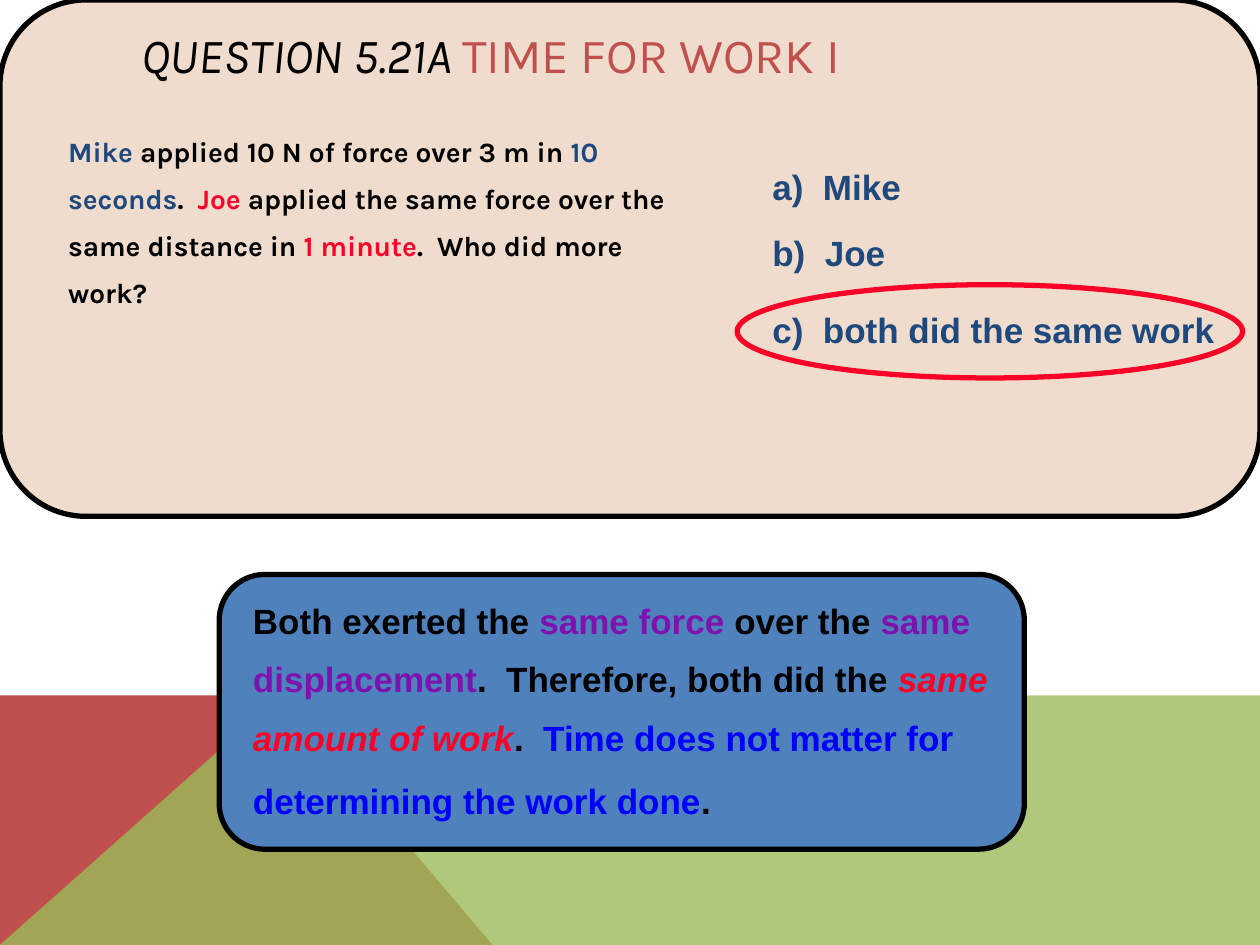
import pptx
import pptx.dml.color
import pptx.enum.shapes
import pptx.enum.text
import pptx.oxml.ns
import pptx.util
from dataclasses import dataclass
from lxml import etree
from pptx.util import Cm


@dataclass(frozen=True)
class Theme:
    black: str = "000000"
    red: str = "C0504D"
    green: str = "9BBB59"
    blue: str = "4F81BD"
    sand: str = "EFDCCD"
    navy: str = "1F497D"
    alert: str = "FC0128"
    purple: str = "7E12AE"
    vivid: str = "0000FF"
    head: str = "Karla"
    sans: str = "Arial"
    title: int = 28
    body: int = 16
    note: int = 20
    edge: int = 3


T = Theme()
SHAPES = pptx.enum.shapes.MSO_SHAPE
WIDTH, HEIGHT = 25.4, 19.05


def rgb(color):
    return pptx.dml.color.RGBColor.from_string(color)


def place(shape, box):
    shape.left, shape.top, shape.width, shape.height = map(Cm, box)


def write(par, text, font=T.sans, size=T.note, color=T.black, bold=True, italic=False):
    run = par.add_run()
    run.text = text
    run.font.name = font
    run.font.size = pptx.util.Pt(size)
    run.font.color.rgb = rgb(color)
    run.font.bold = bold
    run.font.italic = italic


def layout(par, lines, before, indent=0):
    """Set spacing and left indent, with no bullet."""
    par.alignment = pptx.enum.text.PP_ALIGN.LEFT
    par.line_spacing = lines
    par.space_before = pptx.util.Pt(before)
    props = par._p.get_or_add_pPr()
    props.set("marL", str(Cm(indent)))
    props.set("indent", "0")
    etree.SubElement(props, pptx.oxml.ns.qn("a:buNone"))


def panel(slide, kind, box, line, fill=None):
    shape = slide.shapes.add_shape(kind, *map(Cm, box))
    shape.shadow.inherit = False
    if fill:
        shape.fill.solid()
        shape.fill.fore_color.rgb = rgb(fill)
    else:
        shape.fill.background()
    shape.line.color.rgb = rgb(line)
    shape.line.width = pptx.util.Pt(T.edge)


def wedge(slide, points, color, alpha=100):
    spots = [(Cm(x), Cm(y)) for x, y in points]
    pen = slide.shapes.build_freeform(*spots[0])
    pen.add_line_segments(spots[1:], close=True)
    shape = pen.convert_to_shape()
    shape.shadow.inherit = False
    shape.fill.solid()
    shape.fill.fore_color.rgb = rgb(color)
    shape.line.fill.background()
    if alpha < 100:
        tint = shape.element.spPr.find(".//" + pptx.oxml.ns.qn("a:srgbClr"))
        etree.SubElement(tint, pptx.oxml.ns.qn("a:alpha"), val=str(alpha * 1000))


def textbox(slide, box):
    frame = slide.shapes.add_textbox(*map(Cm, box)).text_frame
    frame.word_wrap = True
    return frame


def holder(shape, box):
    """Move a placeholder to the front and return its text frame."""
    place(shape, box)
    shape.element.getparent().append(shape.element)
    shape.text_frame.auto_size = pptx.enum.text.MSO_AUTO_SIZE.NONE
    return shape.text_frame


def scenery(slide):
    top, peak = 14.02, 5.66
    wedge(slide, [(0, HEIGHT), (0, top), (peak, top), (9.93, HEIGHT)], T.red)
    wedge(slide, [(0, HEIGHT), (peak, top), (WIDTH, top), (WIDTH, HEIGHT)], T.green, 80)


def reason(slide):
    panel(slide, SHAPES.ROUNDED_RECTANGLE, (4.42, 11.58, 16.23, 5.54), T.black, T.blue)
    par = textbox(slide, (4.06, 11.63, 16.54, 5.38)).paragraphs[0]
    layout(par, 1.39, 7, 0.79)
    write(par, "Both exerted the ")
    write(par, "same force ", color=T.purple)
    write(par, "over the ")
    write(par, "same displacement", color=T.purple)
    write(par, ".  Therefore, both did the ")
    write(par, "same amount of work", color=T.alert, italic=True)
    write(par, ".  ")
    write(par, "Time does not matter for determining the work done", color=T.vivid)
    write(par, ".")
    write(par, " ", size=22)


def heading(slide):
    frame = holder(slide.shapes.title, (2.59, 0, 20.27, 2.34))
    frame.vertical_anchor = pptx.enum.text.MSO_ANCHOR.MIDDLE
    par = frame.paragraphs[0]
    layout(par, 0.9, 0)
    look = dict(font=T.head, size=T.title, bold=False)
    write(par, "QUESTION 5.21A ", italic=True, **look)
    write(par, "TIME FOR WORK I", color=T.red, **look)


def answers(slide):
    panel(slide, SHAPES.OVAL, (14.86, 5.74, 10.19, 1.88), T.alert)
    frame = textbox(slide, (15.32, 2.95, 10.08, 5.38))
    for i, text in enumerate(["a)  Mike", "b)  Joe", "c)  both did the same work"]):
        par = frame.add_paragraph() if i else frame.paragraphs[0]
        layout(par, 1.3, 7)
        write(par, text, color=T.navy)
    write(par, " ", size=24)


def problem(slide):
    par = holder(slide.placeholders[1], (0, 2.31, 13.69, 6.83)).paragraphs[0]
    layout(par, 1.4, 8, 1.12)
    for text, color in [
        ("Mike ", T.navy),
        ("applied 10 N of force over 3 m in ", T.black),
        ("10 seconds", T.navy),
        (".  ", T.black),
        ("Joe ", T.alert),
        ("applied the same force over the same distance in ", T.black),
        ("1 minute", T.alert),
        (".  Who did more work?", T.black),
    ]:
        write(par, text, font=T.head, size=T.body, color=color)


def main():
    deck = pptx.Presentation()
    deck.slide_width, deck.slide_height = Cm(WIDTH), Cm(HEIGHT)
    slide = deck.slides.add_slide(deck.slide_layouts[1])
    scenery(slide)
    reason(slide)
    panel(slide, SHAPES.ROUNDED_RECTANGLE, (0, 0, WIDTH, 10.41), T.black, T.sand)
    heading(slide)
    answers(slide)
    problem(slide)
    deck.save("out.pptx")


if __name__ == "__main__":
    main()
